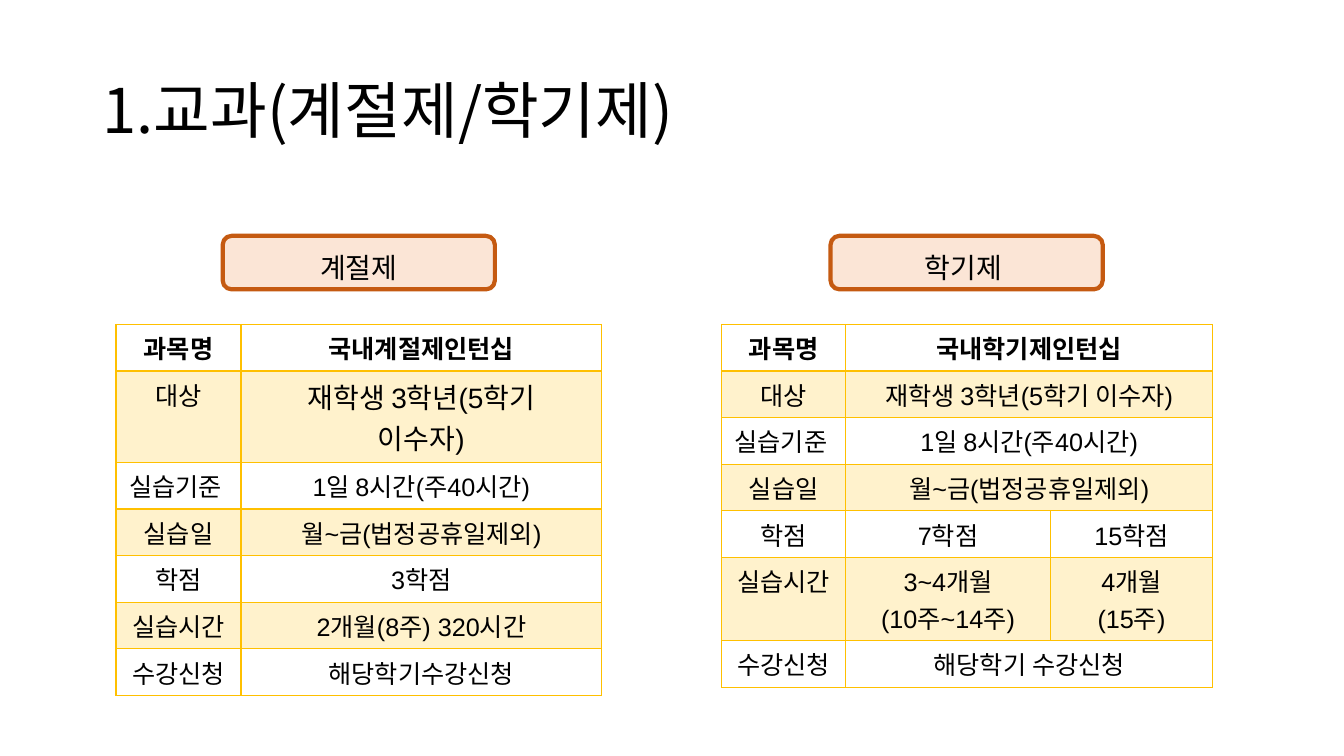
from lxml import etree
from pptx import Presentation
from pptx.dml.color import RGBColor
from pptx.enum.shapes import MSO_SHAPE as Shape
from pptx.enum.text import MSO_ANCHOR as Anchor, PP_ALIGN as Align
from pptx.oxml.ns import qn
from pptx.util import Pt

BLACK = RGBColor(0x00, 0x00, 0x00)
GOLD = RGBColor(0xFF, 0xC0, 0x00)
PEACH = RGBColor(0xFB, 0xE5, 0xD6)
RUST = RGBColor(0xC5, 0x5A, 0x11)

HEADING_FONT = "Noto Sans CJK KR"
TABLE_FONT = "Arial"
TABLE_TOP = 231.8
ROW_HEIGHT = 33.3

# Each row lists its cells; a short row merges its last cell to the right edge
SEASONAL = [
    ["과목명", "국내계절제인턴십"],
    ["대상", "재학생 3학년(5학기 이수자)"],
    ["실습기준 ", "1일 8시간(주40시간)"],
    ["실습일", "월~금(법정공휴일제외)"],
    ["학점", "3학점"],
    ["실습시간", "2개월(8주) 320시간"],
    ["수강신청", "해당학기수강신청"],
]
SEMESTER = [
    ["과목명", "국내학기제인턴십"],
    ["대상", "재학생 3학년(5학기 이수자)"],
    ["실습기준 ", "1일 8시간(주40시간)"],
    ["실습일", "월~금(법정공휴일제외)"],
    ["학점", "7학점", "15학점"],
    ["실습시간", "3~4개월\n(10주~14주)", "4개월\n(15주)"],
    ["수강신청", "해당학기 수강신청"],
]


def style_text(frame, font_name, size, align, bold=False):
    for paragraph in frame.paragraphs:
        paragraph.alignment = align
        font = paragraph.font
        font.name, font.size, font.bold = font_name, Pt(size), bold
        font.color.rgb = BLACK


def add_title(slide, text):
    title = slide.shapes.add_textbox(Pt(66), Pt(28.8), Pt(828), Pt(104.4))
    frame = title.text_frame
    frame.word_wrap = True
    frame.vertical_anchor = Anchor.MIDDLE
    frame.text = text
    style_text(frame, HEADING_FONT, 44, Align.LEFT)
    frame.paragraphs[0].line_spacing = 0.9


def add_label(slide, left, text):
    label = slide.shapes.add_shape(
        Shape.ROUNDED_RECTANGLE, Pt(left), Pt(168.5), Pt(194.4), Pt(38.2))
    label.shadow.inherit = False
    label.fill.solid()
    label.fill.fore_color.rgb = PEACH
    label.line.color.rgb = RUST
    label.line.width = Pt(3)
    frame = label.text_frame
    frame.vertical_anchor = Anchor.MIDDLE
    frame.margin_top, frame.margin_bottom = Pt(7), Pt(0)
    frame.text = text
    style_text(frame, HEADING_FONT, 20, Align.CENTER)


def set_borders(cell, bottom):
    """Gold lines on all four sides, placed ahead of the cell's fill."""
    properties = cell._tc.get_or_add_tcPr()
    sides = [("a:lnL", 1), ("a:lnR", 1), ("a:lnT", 1), ("a:lnB", bottom)]
    for index, (side, width) in enumerate(sides):
        line = etree.Element(qn(side), w=str(Pt(width)))
        fill = etree.SubElement(line, qn("a:solidFill"))
        etree.SubElement(fill, qn("a:srgbClr"), val=str(GOLD))
        properties.insert(index, line)


def fill_cell(cell, banded):
    if not banded:
        cell.fill.background()
        return
    cell.fill.solid()
    cell.fill.fore_color.rgb = GOLD
    # 20 % opacity
    color = cell._tc.tcPr.find(".//" + qn("a:srgbClr"))
    etree.SubElement(color, qn("a:alpha"), val="20000")


def add_course_table(slide, left, rows, widths, tall_row, tall_height):
    heights = [ROW_HEIGHT] * len(rows)
    heights[tall_row] = tall_height
    table = slide.shapes.add_table(
        len(rows), len(widths), Pt(left), Pt(TABLE_TOP),
        Pt(sum(widths)), Pt(sum(heights))).table
    for column, width in zip(table.columns, widths):
        column.width = Pt(width)
    for row, height in zip(table.rows, heights):
        row.height = Pt(height)

    last = len(widths) - 1
    for r, texts in enumerate(rows):
        for c in range(len(widths)):
            cell = table.cell(r, c)
            fill_cell(cell, banded=r % 2 == 1)
            set_borders(cell, bottom=2 if r == 0 else 1)
            if c < len(texts):
                cell.text = texts[c]
            style_text(cell.text_frame, TABLE_FONT, 18, Align.CENTER, bold=r == 0)
        if len(texts) <= last:
            table.cell(r, len(texts) - 1).merge(table.cell(r, last))
    return table


def main():
    deck = Presentation()
    deck.slide_width, deck.slide_height = Pt(960), Pt(540)
    slide = deck.slides.add_slide(deck.slide_layouts[6])

    add_title(slide, "1.교과(계절제/학기제)")

    # Seasonal course
    add_label(slide, 159.1, "계절제")
    seasonal = add_course_table(
        slide, 82.8, SEASONAL, [89.3, 257.8], tall_row=1, tall_height=65.3)
    # Larger text, with wide margins so that it wraps between words
    eligibility = seasonal.cell(1, 1)
    eligibility.text_frame.paragraphs[0].font.size = Pt(20)
    eligibility.margin_left = eligibility.margin_right = Pt(29)

    # Semester course
    add_label(slide, 593.3, "학기제 ")
    add_course_table(
        slide, 515.5, SEMESTER, [88.6, 146.2, 115.9], tall_row=5, tall_height=59.4)

    deck.save("out.pptx")


if __name__ == "__main__":
    main()
